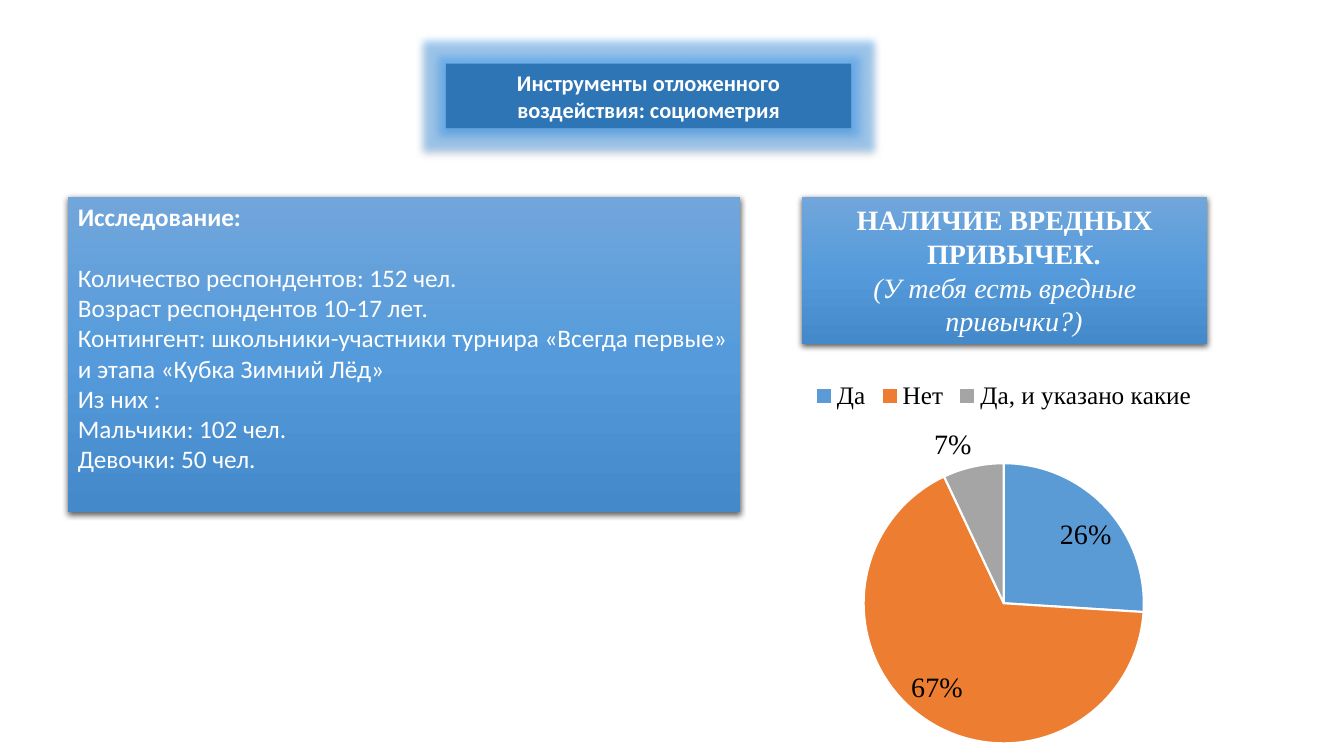
from copy import deepcopy
from lxml.etree import SubElement
from pptx import Presentation
from pptx.chart.data import CategoryChartData
from pptx.dml.color import RGBColor
from pptx.enum.chart import XL_CHART_TYPE, XL_LABEL_POSITION, XL_LEGEND_POSITION
from pptx.enum.shapes import MSO_SHAPE
from pptx.enum.text import MSO_ANCHOR, PP_ALIGN
from pptx.oxml import parse_xml
from pptx.oxml.ns import nsdecls, qn
from pptx.util import Pt

GRADIENT = ["71A6DB", "559BDB", "448ACA"]
SERIF = "Times New Roman"


def color(value):
    return RGBColor.from_string(value)


def add_effect(shape, tag, value, alpha, **attributes):
    effects = shape._element.spPr.find(qn("a:effectLst"))
    effect = SubElement(effects, qn(tag))
    for name, amount in attributes.items():
        effect.set(name, str(amount))
    tint = SubElement(effect, qn("a:srgbClr"), val=value)
    SubElement(tint, qn("a:alpha"), val=str(alpha * 1000))


def add_shadow(shape, alpha, blur, distance):
    add_effect(shape, "a:outerShdw", "000000", alpha, blurRad=Pt(blur), dist=Pt(distance),
               dir=5400000, algn="ctr", rotWithShape=0)


def fill_gradient(shape, values):
    shape.fill.gradient()
    shape.fill.gradient_angle = 270
    stops = shape.fill._fill._gradFill.find(qn("a:gsLst"))
    stops.insert(1, deepcopy(stops[0]))
    for index, (stop, value) in enumerate(zip(shape.fill.gradient_stops, values)):
        stop.position = index / (len(values) - 1)
        stop.color.rgb = color(value)


def add_panel(page, left, top, width, height, fill=None, anchor=MSO_ANCHOR.MIDDLE,
              side=7.2, edge=3.6):
    panel = page.shapes.add_shape(MSO_SHAPE.RECTANGLE, Pt(left), Pt(top), Pt(width), Pt(height))
    panel.line.fill.background()
    panel.shadow.inherit = False
    if fill:
        panel.fill.solid()
        panel.fill.fore_color.rgb = color(fill)
    else:
        fill_gradient(panel, GRADIENT)
        add_shadow(panel, 63, 4.5, 1.5)
    frame = panel.text_frame
    frame.word_wrap = True
    frame.vertical_anchor = anchor
    frame.margin_left = frame.margin_right = Pt(side)
    frame.margin_top = frame.margin_bottom = Pt(edge)
    return panel


def add_text(panel, text, size=18, font="Calibri", bold=False, italic=False,
             align=PP_ALIGN.LEFT, after=0, hanging=0):
    frame = panel.text_frame
    para = frame.paragraphs[0] if not frame.text else frame.add_paragraph()
    para.alignment = align
    para.space_after = Pt(after)
    if hanging:
        properties = para._p.get_or_add_pPr()
        properties.set("marL", str(Pt(hanging)))
        properties.set("indent", str(-Pt(hanging)))
    span = para.add_run()
    span.text = text
    span.font.size = Pt(size)
    span.font.name = font
    span.font.bold = bold
    span.font.italic = italic
    span.font.color.rgb = color("FFFFFF")


def set_font(font, size, name):
    font.size = Pt(size)
    font.name = name
    font.color.rgb = color("000000")


def add_pie(page, left, top, width, height, shares, colors):
    data = CategoryChartData()
    data.categories = list(shares)
    data.add_series("Series 1", list(shares.values()))
    chart = page.shapes.add_chart(XL_CHART_TYPE.PIE, Pt(left), Pt(top), Pt(width), Pt(height),
                                  data).chart
    chart.has_title = False
    set_font(chart.font, 10, "Calibri")
    chart.has_legend = True
    chart.legend.position = XL_LEGEND_POSITION.TOP
    chart.legend.include_in_layout = False
    set_font(chart.legend.font, 18, SERIF)
    plot = chart.plots[0]
    plot.vary_by_categories = True
    for index, value in enumerate(colors):
        point = plot.series[0].points[index]
        point.format.fill.solid()
        point.format.fill.fore_color.rgb = color(value)
        point.format.line.color.rgb = color("FFFFFF")
        point.format.line.width = Pt(1.5)
    labels = plot.series[0].data_labels
    labels.show_percentage = True
    labels.show_value = False
    labels.number_format = "0%"
    labels.number_format_is_linked = False
    labels.position = XL_LABEL_POSITION.BEST_FIT
    set_font(labels.font, 20, SERIF)
    area = chart._chartSpace.chart.plotArea
    for layout in area.findall(qn("c:layout")):
        area.remove(layout)
    area.insert(0, parse_xml(
        f'<c:layout {nsdecls("c")}><c:manualLayout><c:layoutTarget val="inner"/>'
        '<c:xMode val="edge"/><c:yMode val="edge"/><c:x val="0.32"/><c:y val="0.24"/>'
        '<c:w val="0.36"/><c:h val="0.73"/></c:manualLayout></c:layout>'))


def main():
    deck = Presentation()
    deck.slide_width, deck.slide_height = Pt(960), Pt(540)
    page = deck.slides.add_slide(deck.slide_layouts[6])

    title = add_panel(page, 318.5, 45.5, 289.5, 46, fill="2E75B6")
    add_effect(title, "a:glow", "399CF7", 40, rad=Pt(11))
    add_shadow(title, 32, 3.5, 2.2)
    add_text(title, "Инструменты отложенного воздействия: социометрия", size=16, bold=True,
             align=PP_ALIGN.CENTER)

    study = add_panel(page, 48.5, 140.5, 480, 225.5, anchor=MSO_ANCHOR.TOP)
    add_text(study, "Исследование:", bold=True, after=21.6)
    for line in ["Количество респондентов: 152 чел.",
                 "Возраст респондентов 10-17 лет.",
                 "Контингент: школьники-участники турнира «Всегда первые» "
                 "и этапа «Кубка Зимний Лёд»",
                 "Из них :",
                 "Мальчики: 102 чел.",
                 "Девочки: 50 чел."]:
        add_text(study, line)

    question = add_panel(page, 573, 140.5, 289.5, 105, side=8.6, edge=4.3)
    serif = dict(size=20, font=SERIF, align=PP_ALIGN.CENTER, hanging=13)
    add_text(question, "НАЛИЧИЕ ВРЕДНЫХ ПРИВЫЧЕК.", bold=True, **serif)
    add_text(question, "(У тебя есть вредные привычки?)", italic=True, **serif)

    add_pie(page, 439, 264, 556, 276, {"Да": 26, "Нет": 67, "Да, и указано какие": 7},
            ["5B9BD5", "ED7D31", "A5A5A5"])
    deck.save("out.pptx")


if __name__ == "__main__":
    main()
